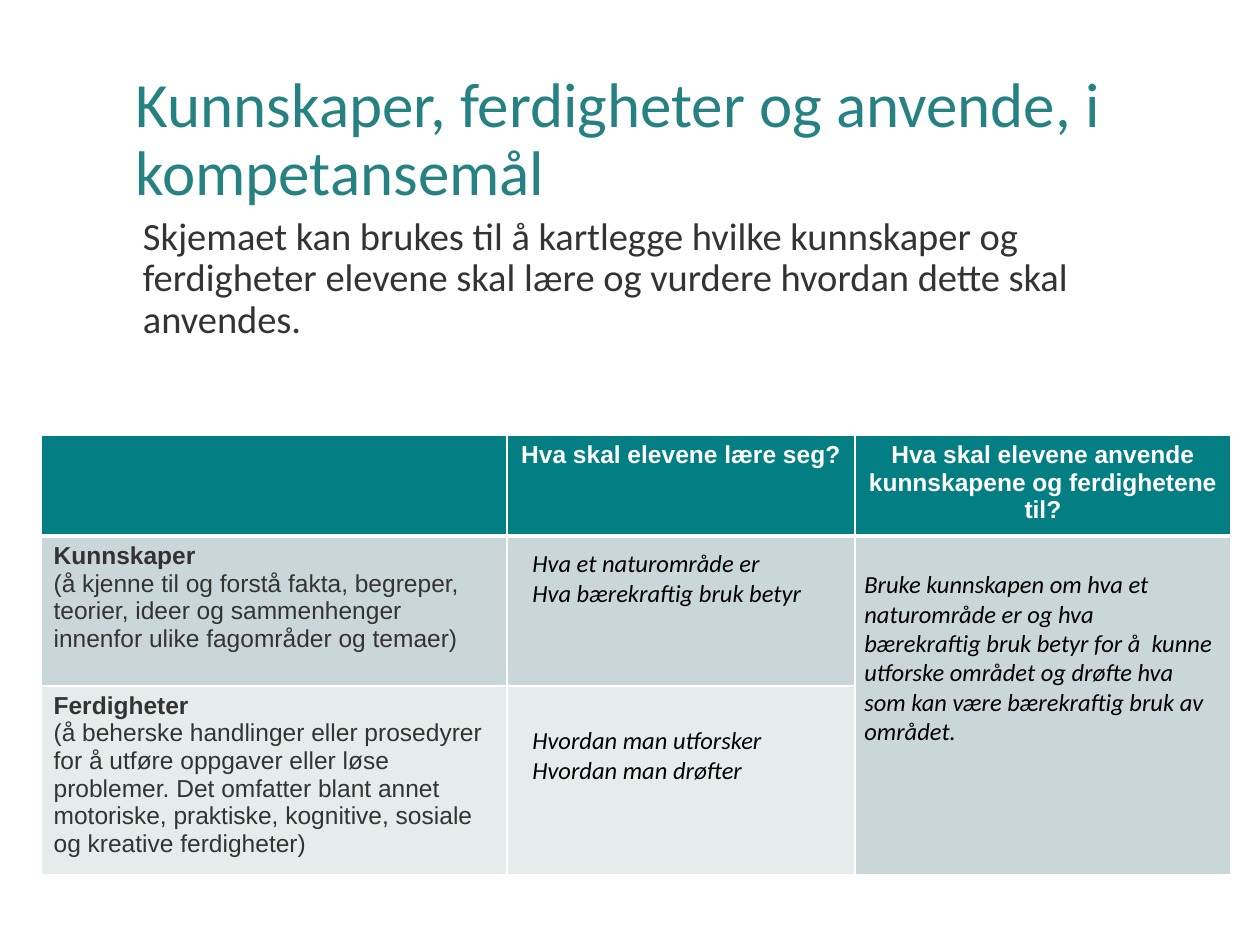
"""Build a slide with a table of knowledge, skills and their use in competence aims."""
from lxml.etree import SubElement
from pptx import Presentation
from pptx.dml.color import RGBColor
from pptx.enum.text import MSO_ANCHOR, PP_ALIGN
from pptx.oxml.ns import qn
from pptx.util import Emu, Pt

COLORS = {"title": "268183", "text": "333333", "note": "000000", "white": "FFFFFF",
          "header": "037F83", "knowledge": "CAD7D8", "skills": "E6ECEC"}
SCALE = 914400 / 126

TITLE = "Kunnskaper, ferdigheter og anvende, i kompetansemål"
INTRO = ("Skjemaet kan brukes til å kartlegge hvilke kunnskaper og ferdigheter "
         "elevene skal lære og vurdere hvordan dette skal anvendes.")
HEADERS = ["", "Hva skal elevene lære seg?",
           "Hva skal elevene anvende kunnskapene og ferdighetene til?"]
TOPICS = [
    ("Kunnskaper", "(å kjenne til og forstå fakta, begreper, teorier, ideer og "
     "sammenhenger innenfor ulike fagområder og temaer)"),
    ("Ferdigheter", "(å beherske handlinger eller prosedyrer for å utføre oppgaver eller "
     "løse problemer. Det omfatter blant annet motoriske, praktiske, kognitive, sosiale "
     "og kreative ferdigheter)"),
]
NOTES = [
    ((520, 542, 313, 102), ["Hva et naturområde er", "Hva bærekraftig bruk betyr"]),
    ((520, 719, 287, 102), ["Hvordan man utforsker", "Hvordan man drøfter"]),
    ((852, 563, 377, 220), [
        "Bruke kunnskapen om hva et naturområde er og hva bærekraftig bruk betyr for å  kunne "
        "utforske området og drøfte hva som kan være bærekraftig bruk av området."]),
]
TABLE_LEFT, TABLE_TOP = 41, 435
COLUMNS = [466, 348, 376]
ROWS = [95, 150, 177]
ROW_FILLS = ["header", "knowledge", "skills"]


def px(length):
    return Emu(round(length * SCALE))


def add_text(frame, text, size=14, font="Calibri", color="text", bold=False, italic=False,
             align=PP_ALIGN.LEFT, spacing=None, first=True):
    para = frame.paragraphs[0] if first else frame.add_paragraph()
    para.alignment = align
    para.line_spacing = spacing
    span = para.add_run()
    span.text = text
    span.font.size, span.font.name = Pt(size), font
    span.font.bold, span.font.italic = bold, italic
    span.font.color.rgb = RGBColor.from_string(COLORS[color])


def add_box(page, place, inset=None, left_inset=None, anchor=MSO_ANCHOR.TOP):
    frame = page.shapes.add_textbox(*map(px, place)).text_frame
    frame.word_wrap = True
    frame.vertical_anchor = anchor
    if inset is not None:
        frame.margin_top = frame.margin_right = frame.margin_bottom = px(inset)
        frame.margin_left = px(inset if left_inset is None else left_inset)
    return frame


def set_borders(cell, widths):
    properties = cell._tc.get_or_add_tcPr()
    for index, (side, width) in enumerate(widths.items()):
        line = SubElement(properties, qn(f"a:ln{side}"), w=str(Pt(width)))
        fill = SubElement(line, qn("a:solidFill"))
        SubElement(fill, qn("a:srgbClr"), val=COLORS["white"])
        properties.remove(line)
        properties.insert(index, line)


def add_grid(page):
    table = page.shapes.add_table(len(ROWS), len(COLUMNS), px(TABLE_LEFT), px(TABLE_TOP),
                                  px(sum(COLUMNS)), px(sum(ROWS))).table
    for column, width in zip(table.columns, COLUMNS):
        column.width = px(width)
    for row_index, (row, height) in enumerate(zip(table.rows, ROWS)):
        row.height = px(height)
        for cell in row.cells:
            cell.fill.solid()
            cell.fill.fore_color.rgb = RGBColor.from_string(COLORS[ROW_FILLS[row_index]])
            set_borders(cell, {"L": 1, "R": 1, "T": 3 if row_index == 1 else 1,
                               "B": 3 if row_index == 0 else 1})
    table.cell(1, 2).merge(table.cell(2, 2))
    for index, header in enumerate(HEADERS):
        if header:
            add_text(table.cell(0, index).text_frame, header, font="Arial", color="white",
                     bold=True, align=PP_ALIGN.CENTER)
    for index, (name, meaning) in enumerate(TOPICS, start=1):
        frame = table.cell(index, 0).text_frame
        add_text(frame, name, font="Arial", bold=True)
        add_text(frame, meaning, font="Arial", first=False)


def main():
    deck = Presentation()
    deck.slide_width, deck.slide_height = px(1260), px(945)
    page = deck.slides.add_slide(deck.slide_layouts[6])
    title = add_box(page, (123, 50, 1045, 183), inset=13, anchor=MSO_ANCHOR.MIDDLE)
    add_text(title, TITLE, size=36, color="title", spacing=0.9)
    intro = add_box(page, (123, 204, 1045, 576), inset=13, left_inset=20)
    add_text(intro, INTRO, size=22, spacing=0.9)
    add_grid(page)
    for place, lines in NOTES:
        frame = add_box(page, place)
        for index, line in enumerate(lines):
            add_text(frame, line, color="note", italic=True, first=index == 0)
    deck.save("out.pptx")


if __name__ == "__main__":
    main()
